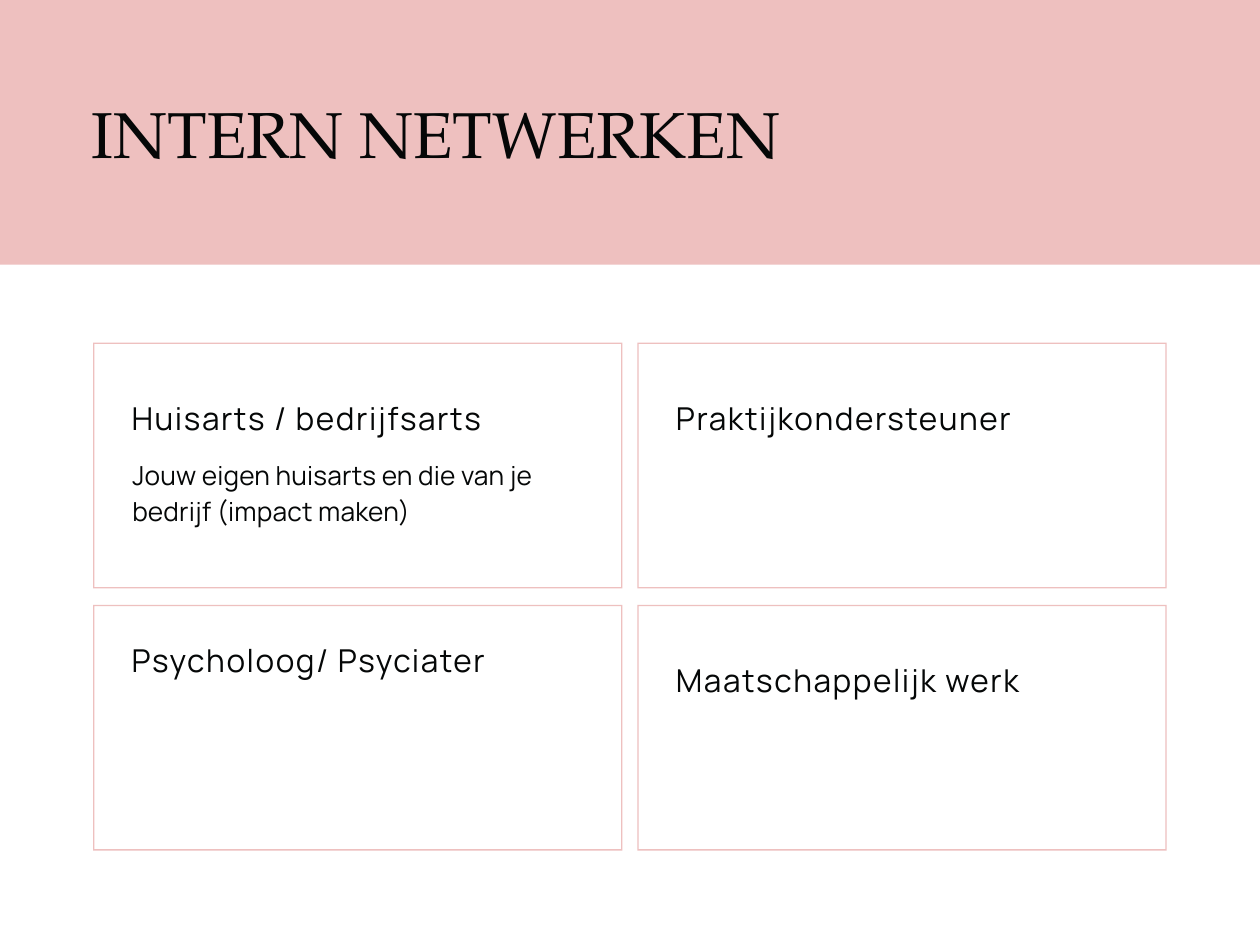
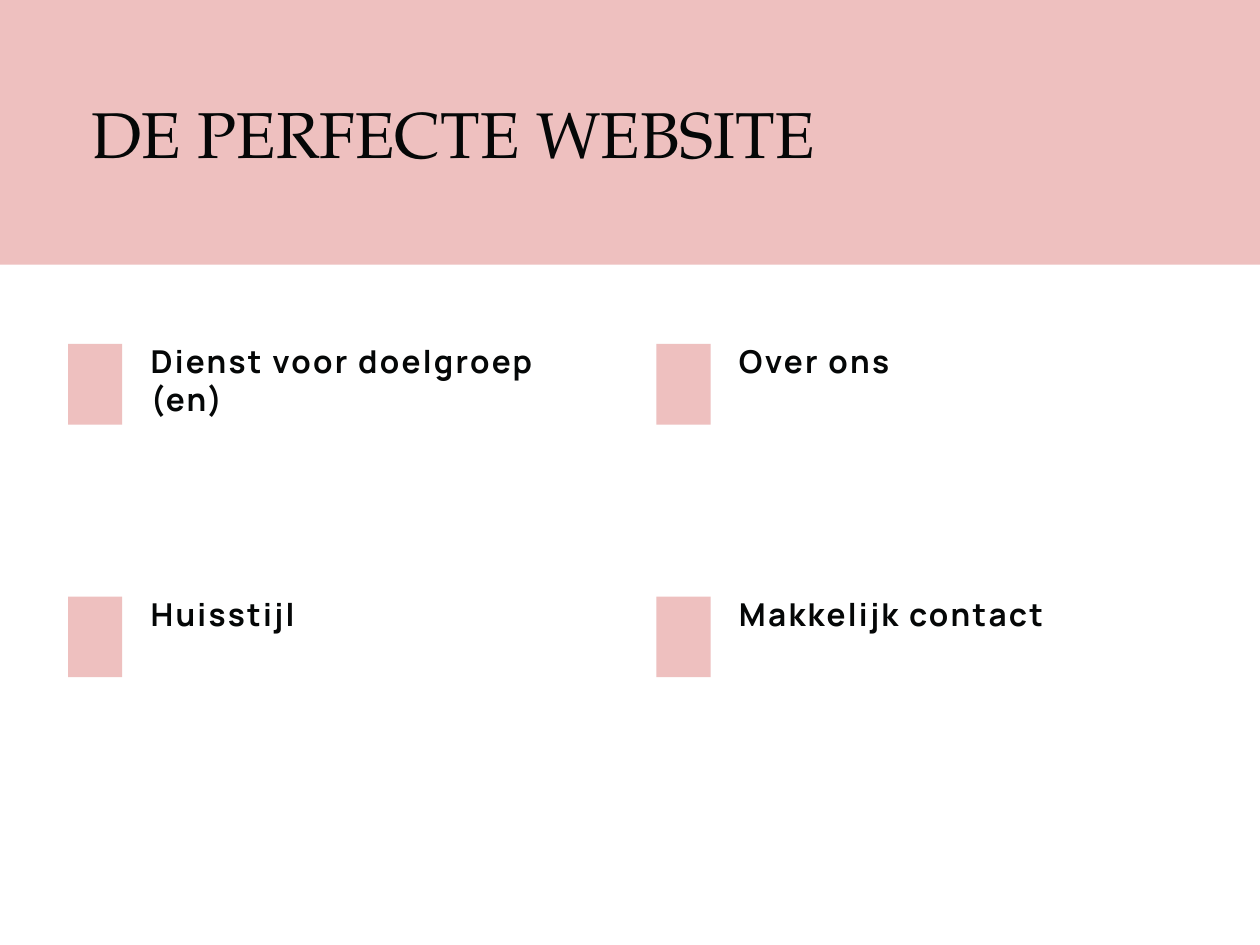
from pptx import Presentation
from pptx.dml.color import RGBColor
from pptx.enum.shapes import MSO_SHAPE
from pptx.enum.text import MSO_ANCHOR, MSO_AUTO_SIZE, PP_ALIGN
from pptx.util import Inches, Pt

# Shared style
PINK = RGBColor(0xEE, 0xC0, 0xBF)
INK = RGBColor(0x05, 0x07, 0x07)
WHITE = RGBColor(0xFF, 0xFF, 0xFF)
BODY_FONT = "Manrope"
TITLE_FONT = "TeX Gyre Pagella"
TEXT_W = 3.59
LABEL_H = 0.31


def paint(sp):
    sp.shadow.inherit = False
    sp.fill.solid()
    sp.fill.fore_color.rgb = PINK
    sp.line.fill.background()


def add_text(s, text, x, y, w=TEXT_W, h=LABEL_H, size=18, leading=21.9,
             font=BODY_FONT, bold=False, tracking=0):
    """Add a text box; tracking is the letter spacing in points."""
    tf = s.shapes.add_textbox(Inches(x), Inches(y), Inches(w), Inches(h)).text_frame
    tf.word_wrap = True
    tf.auto_size = MSO_AUTO_SIZE.SHAPE_TO_FIT_TEXT
    tf.vertical_anchor = MSO_ANCHOR.TOP
    tf.margin_left = tf.margin_right = tf.margin_top = tf.margin_bottom = 0
    p = tf.paragraphs[0]
    p.alignment = PP_ALIGN.LEFT
    p.line_spacing = Pt(leading)
    r = p.add_run()
    r.text = text
    r.font.name = font
    r.font.size = Pt(size)
    r.font.bold = bold
    r.font.color.rgb = INK
    if tracking:
        r.font._element.set("spc", str(round(tracking * 100)))


def add_block(s, x, y, w, h):
    sp = s.shapes.add_shape(MSO_SHAPE.RECTANGLE, Inches(x), Inches(y), Inches(w), Inches(h))
    paint(sp)


def add_frame(s, x, y, w=4.2, h=1.95, edge=0.01):
    """Add a thin hollow frame; the inner contour runs against the outer one."""
    left, top, right, bottom = (Inches(v) for v in (x, y, x + w, y + h))
    e = Inches(edge)
    fb = s.shapes.build_freeform(left, top)
    fb.add_line_segments([(left, bottom), (right, bottom), (right, top)], close=True)
    fb.move_to(right - e, bottom - e)
    fb.add_line_segments([(left + e, bottom - e), (left + e, top + e),
                          (right - e, top + e)], close=True)
    paint(fb.convert_to_shape())


def add_title_band(s, title):
    add_block(s, -0.13, -0.1, 10.26, 2.2)
    add_text(s, title, 0.73, 0.75, w=8.54, h=0.62, size=37, leading=43.9, font=TITLE_FONT)


def new_slide(prs):
    s = prs.slides.add_slide(prs.slide_layouts[6])
    s.background.fill.solid()
    s.background.fill.fore_color.rgb = WHITE
    return s


def build_network_slide(prs):
    s = new_slide(prs)
    # Two by two frames, each with its label and the label's drop
    cards = [("Huisarts / bedrijfsarts", 0.44), ("Praktijkondersteuner", 0.44),
             ("Psycholoog/ Psyciater", 0.28), ("Maatschappelijk werk", 0.44)]
    for i, (label, drop) in enumerate(cards):
        row, col = divmod(i, 2)
        x, y = 0.74 + 4.32 * col, 2.72 + 2.08 * row
        add_frame(s, x, y)
        add_text(s, label, x + 0.305, y + drop, tracking=0.9)
    add_text(s, "Jouw eigen huisarts en die van je bedrijf (impact maken)",
             1.05, 3.61, h=0.57, size=15, leading=20.7, tracking=0.1)
    add_title_band(s, "INTERN NETWERKEN")


def build_website_slide(prs):
    s = new_slide(prs)
    # Two by two items, each with a block marker
    items = ["Dienst voor doelgroep (en)", "Over ons", "Huisstijl", "Makkelijk contact"]
    for i, label in enumerate(items):
        row, col = divmod(i, 2)
        x, y = 0.54 + 4.67 * col, 2.73 + 2.005 * row
        add_text(s, label, x + 0.655, y - 0.02, h=0.61 if i == 0 else LABEL_H,
                 bold=True, tracking=1.3)
        add_block(s, x, y, 0.43, 0.64)
    add_title_band(s, "DE PERFECTE WEBSITE")


def main():
    prs = Presentation()
    prs.slide_width, prs.slide_height = Inches(10), Inches(7.5)
    build_network_slide(prs)
    build_website_slide(prs)
    prs.save("out.pptx")


if __name__ == "__main__":
    main()
